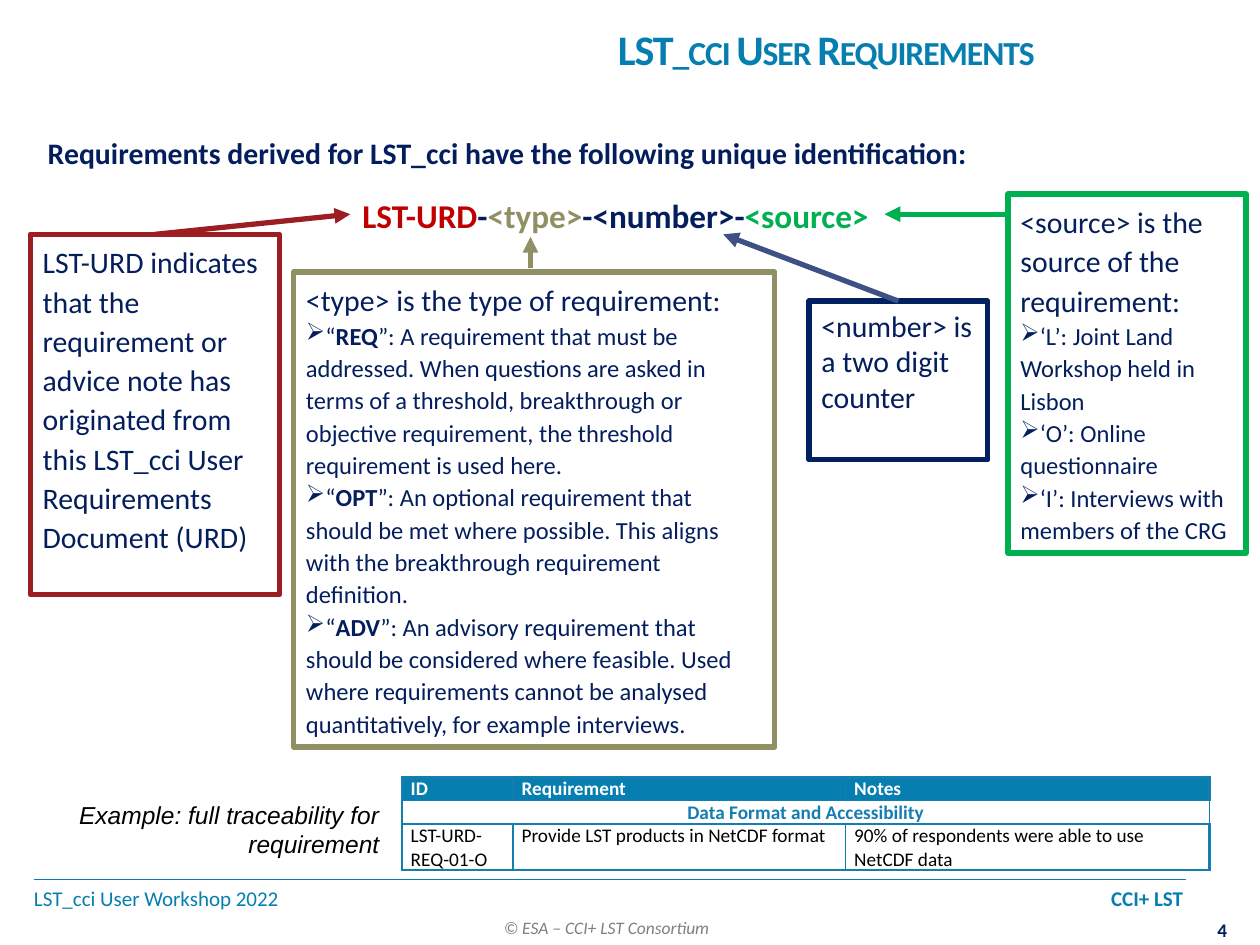
from lxml import etree
from pptx import Presentation
from pptx.dml.color import RGBColor
from pptx.enum.shapes import MSO_CONNECTOR, MSO_SHAPE
from pptx.enum.text import MSO_ANCHOR, MSO_AUTO_SIZE, PP_ALIGN
from pptx.oxml.ns import qn
from pptx.util import Inches, Pt

LINE, RECT = MSO_CONNECTOR.STRAIGHT, MSO_SHAPE.RECTANGLE
TOP, MIDDLE = MSO_ANCHOR.TOP, MSO_ANCHOR.MIDDLE
LEFT, CENTER, RIGHT = PP_ALIGN.LEFT, PP_ALIGN.CENTER, PP_ALIGN.RIGHT
JUSTIFY = PP_ALIGN.JUSTIFY
NAVY, BLUE, EDGE, WHITE = "041E5D", "067EB0", "137EAF", "FFFFFF"
RED, OLIVE, GREEN = "9D1E22", "919064", "00B050"


def paint(color, code):
    color.rgb = RGBColor.from_string(code)


def add_run(para, text, size, code=NAVY, bold=False, italic=False, face="Calibri"):
    run = para.add_run()
    run.text = text
    font = run.font
    font.name, font.size, font.bold, font.italic = face, Pt(size), bold, italic
    paint(font.color, code)
    return run


def next_para(frame, first, align=LEFT, space=None):
    para = frame.paragraphs[0] if first else frame.add_paragraph()
    para.alignment = align
    if space:
        para.line_spacing = space
    return para


def add_text(slide, box, align=LEFT, wrap=True, inset=(0.1, 0.05)):
    frame = slide.shapes.add_textbox(*map(Inches, box)).text_frame
    frame.word_wrap = wrap
    frame.margin_left = frame.margin_right = Inches(inset[0])
    frame.margin_top = frame.margin_bottom = Inches(inset[1])
    frame.paragraphs[0].alignment = align
    return frame


def add_line(slide, start, end, code, width, arrow=False):
    line = slide.shapes.add_connector(LINE, *map(Inches, start + end))
    paint(line.line.color, code)
    line.line.width = Pt(width)
    props = line._element.spPr
    if arrow:
        etree.SubElement(props.find(qn("a:ln")), qn("a:tailEnd"), type="triangle")
    etree.SubElement(props, qn("a:effectLst"))


def add_title(slide, box):
    title = slide.shapes.title
    title.left, title.top, title.width, title.height = map(Inches, box)
    frame = title.text_frame
    frame.auto_size = MSO_AUTO_SIZE.NONE
    frame.vertical_anchor = MIDDLE
    para = next_para(frame, True, CENTER)
    run = add_run(para, "LST_cci User Requirements", 24, BLUE, True)
    props = run.font._element
    props.set("cap", "small")
    props.set("spc", "-60")


def add_intro(slide, box):
    frame = add_text(slide, box)
    para = next_para(frame, True, LEFT, 1.1)
    para.space_after = Pt(6)
    add_run(para, "Requirements derived for LST_cci have the following "
            "unique identification:", 17, bold=True)
    para = next_para(frame, False, CENTER, 1.1)
    para.space_before = para.space_after = Pt(6)
    for text, code in (("LST-URD", "C00000"), ("-", NAVY), ("<type>", OLIVE),
                       ("-<number>-", NAVY), ("<source>", GREEN)):
        add_run(para, text, 19, code, True)


def add_note(slide, box, code, head, items=(), space=1.1):
    shape = slide.shapes.add_shape(RECT, *map(Inches, box))
    shape.shadow.inherit = False
    shape.fill.background()
    paint(shape.line.color, code)
    shape.line.width = Pt(3)
    frame = shape.text_frame
    frame.word_wrap = True
    frame.vertical_anchor = TOP
    add_run(next_para(frame, True, LEFT, space), head, 17)
    for term, text in items:
        para = next_para(frame, False, LEFT, space)
        para.level = 1
        props = para._p.get_or_add_pPr()
        props.set("marL", "0")
        props.set("indent", str(-Inches(0.19)))
        etree.SubElement(props, qn("a:buChar"), char="➢")
        if term:
            add_run(para, "“", 14)
            add_run(para, term, 14, bold=True)
        add_run(para, text, 14)


def add_grid(slide, box):
    rows = [("ID", "Requirement", "Notes"),
            ("Data Format and Accessibility", "", ""),
            ("LST-URD-REQ-01-O", "Provide LST products in NetCDF format",
             "90% of respondents were able to use NetCDF data")]
    looks = [(BLUE, WHITE, True, JUSTIFY), (WHITE, EDGE, True, CENTER),
             (WHITE, "000000", False, LEFT)]
    table = slide.shapes.add_table(3, 3, *map(Inches, box)).table
    for col, width in zip(table.columns, (0.88, 2.64, 2.89)):
        col.width = Inches(width)
    for row, part in zip(table.rows, (1, 1, 2)):
        row.height = Inches(box[3] * part / 4)
    table.cell(1, 0).merge(table.cell(1, 2))
    for r, (texts, look) in enumerate(zip(rows, looks)):
        fill, code, bold, align = look
        for c, text in enumerate(texts):
            cell = table.cell(r, c)
            cell.margin_left = cell.margin_right = Inches(0.07)
            cell.margin_top = cell.margin_bottom = 0
            edges = {"L": c == 0, "R": c == 2, "T": r != 1, "B": r != 0}
            for side, thick in edges.items():
                add_edge(cell, side, 1.5 if thick else 1)
            cell.fill.solid()
            paint(cell.fill.fore_color, fill)
            if text:
                para = next_para(cell.text_frame, True, align)
                add_run(para, text, 11, code, bold)


def add_edge(cell, side, width):
    props = cell._tc.get_or_add_tcPr()
    edge = etree.SubElement(props, qn("a:ln" + side), w=str(Pt(width)))
    fill = etree.SubElement(edge, qn("a:solidFill"))
    etree.SubElement(fill, qn("a:srgbClr"), val=EDGE)


def add_footer(slide, box):
    left, top, width, height = box
    para = add_text(slide, box, inset=(0, 0.05)).paragraphs[0]
    tabs = etree.SubElement(para._p.get_or_add_pPr(), qn("a:tabLst"))
    etree.SubElement(tabs, qn("a:tab"), pos=str(Inches(9.12)), algn="r")
    add_run(para, "LST_cci User Workshop 2022\t", 12, BLUE)
    add_run(para, "CCI+ LST", 12, BLUE, True)
    add_line(slide, (left, top), (left + width, top), BLUE, 1)
    frame = add_text(slide, (left + 3.63, top + 0.25, 1.86, 0.27), wrap=False)
    add_run(frame.paragraphs[0], "© ESA – CCI+ LST Consortium", 10,
            "808080", italic=True)
    frame = add_text(slide, (left + 9.3, top + 0.31, 0.26, 0.19), CENTER,
                     False, (0, 0))
    add_run(frame.paragraphs[0], "4", 11, bold=True)


def main():
    deck = Presentation()
    deck.slide_width, deck.slide_height = Inches(10), Inches(7.5)
    slide = deck.slides.add_slide(deck.slide_layouts[5])
    add_footer(slide, (0.27, 6.98, 9.14, 0.3))
    add_title(slide, (3.5, 0.05, 5.91, 0.67))
    add_intro(slide, (0.28, 0.99, 9.21, 1.02))
    add_note(slide, (0.24, 1.86, 1.98, 2.86), RED,
             "LST-URD indicates that the requirement or advice note has "
             "originated from this LST_cci User Requirements Document (URD)")
    add_note(slide, (2.33, 2.16, 3.82, 3.77), OLIVE,
             "<type> is the type of requirement:", [
                 ("REQ", "”: A requirement that must be addressed. When "
                  "questions are asked in terms of a threshold, breakthrough "
                  "or objective requirement, the threshold requirement is "
                  "used here."),
                 ("OPT", "”: An optional requirement that should be met where "
                  "possible. This aligns with the breakthrough requirement "
                  "definition."),
                 ("ADV", "”: An advisory requirement that should be "
                  "considered where feasible. Used where requirements cannot "
                  "be analysed quantitatively, for example interviews.")])
    add_note(slide, (6.42, 2.39, 1.42, 1.26), "002060",
             "<number> is a two digit counter", space=None)
    add_note(slide, (8, 1.54, 1.89, 2.85), GREEN,
             "<source> is the source of the requirement:", [
                 ("", "‘L’: Joint Land Workshop held in Lisbon"),
                 ("", "‘O’: Online questionnaire"),
                 ("", "‘I’: Interviews with members of the CRG")])
    for start, end, code in (((1.23, 1.86), (2.78, 1.7), RED),
                             ((4.21, 2.13), (4.21, 1.88), OLIVE),
                             ((7.13, 2.39), (5.74, 1.86), "3D5185"),
                             ((8, 1.7), (7.02, 1.7), GREEN)):
        add_line(slide, start, end, code, 3, True)
    add_grid(slide, (3.19, 6.17, 6.41, 0.73))
    frame = add_text(slide, (0.24, 6.3, 2.87, 0.57), RIGHT)
    add_run(frame.paragraphs[0], "Example: full traceability for requirement",
            14, "000000", italic=True, face="Arial")
    deck.save("out.pptx")


if __name__ == "__main__":
    main()
